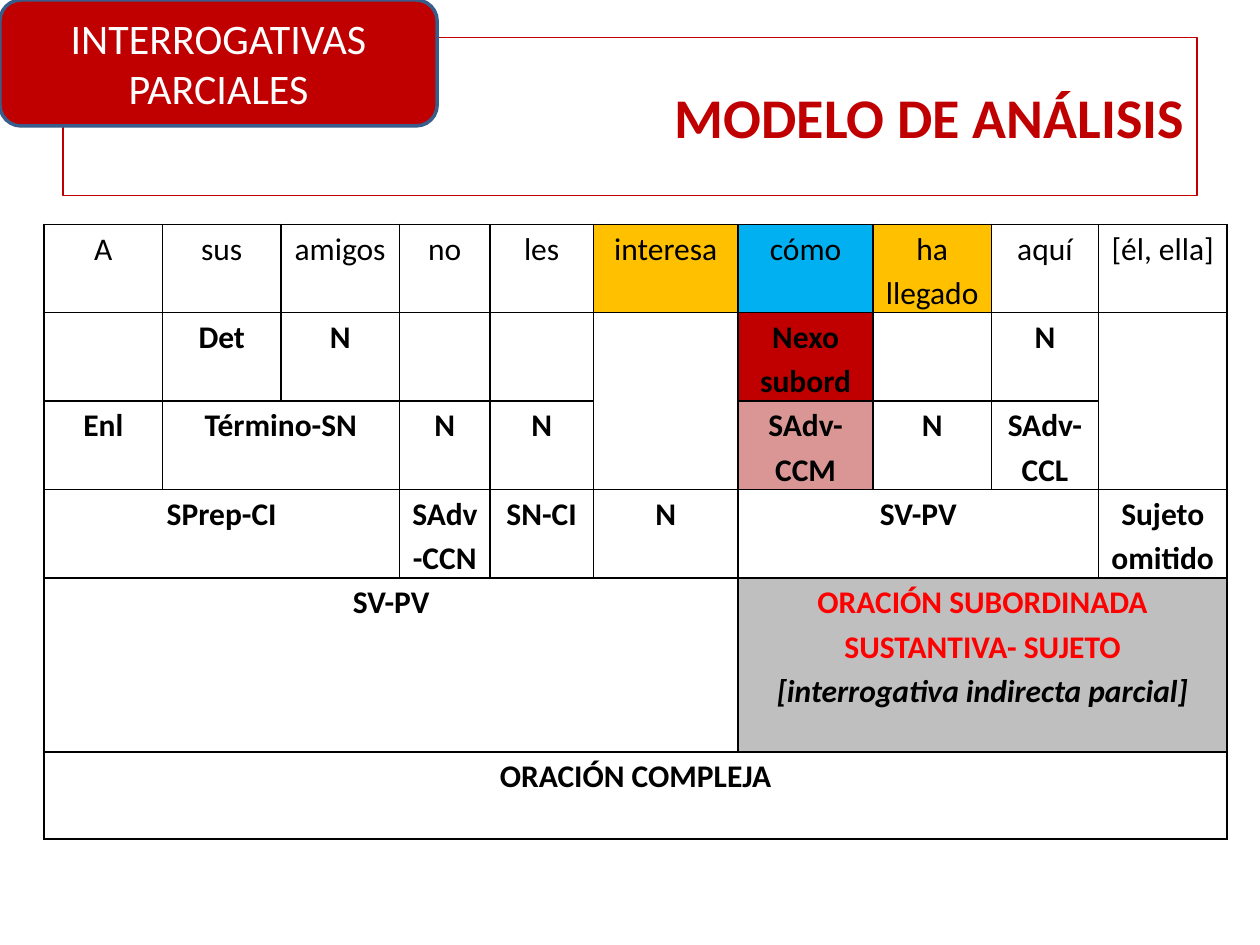
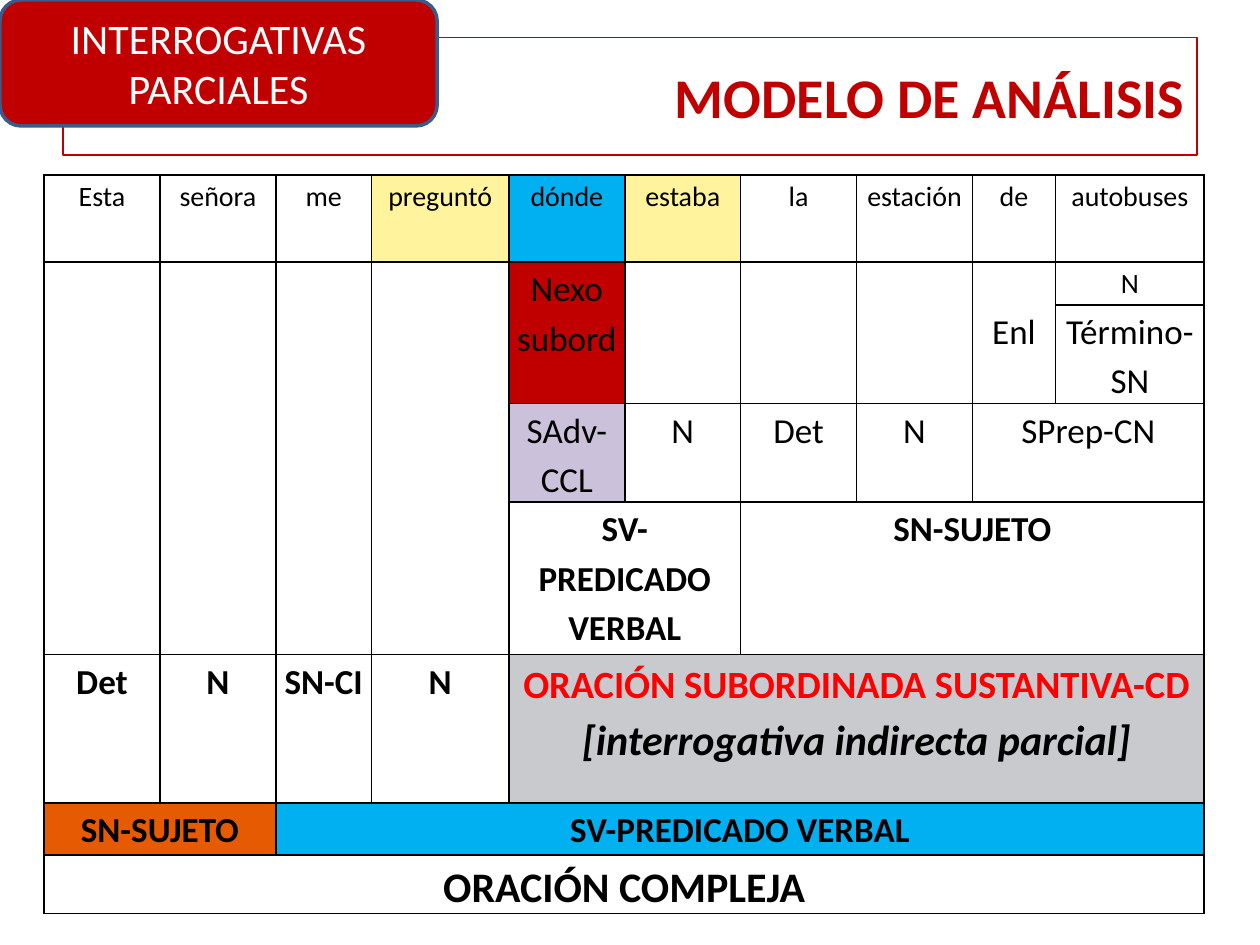
from lxml import etree
from pptx import Presentation
from pptx.dml.color import RGBColor
from pptx.enum.shapes import MSO_SHAPE
from pptx.enum.text import MSO_ANCHOR, PP_ALIGN
from pptx.oxml.ns import qn
from pptx.util import Inches, Pt

RECT = MSO_SHAPE.RECTANGLE
ROUND = MSO_SHAPE.ROUNDED_RECTANGLE
MIDDLE = MSO_ANCHOR.MIDDLE
CENTER = PP_ALIGN.CENTER
RIGHT = PP_ALIGN.RIGHT

BLACK = RGBColor(0x00, 0x00, 0x00)
WHITE = RGBColor(0xFF, 0xFF, 0xFF)
CRIMSON = RGBColor(0xC0, 0x00, 0x00)
RED = RGBColor(0xFF, 0x00, 0x00)
NAVY = RGBColor(0x38, 0x5D, 0x8A)
AMBER = RGBColor(0xFF, 0xC0, 0x00)
SKY = RGBColor(0x00, 0xB0, 0xF0)
ROSE = RGBColor(0xD9, 0x96, 0x94)
GREY = RGBColor(0xBF, 0xBF, 0xBF)
CREAM = RGBColor(0xFF, 0xF3, 0x9D)
LILAC = RGBColor(0xCC, 0xC1, 0xDA)
SILVER = RGBColor(0xC8, 0xCA, 0xCE)
ORANGE = RGBColor(0xE6, 0x5B, 0x01)

FONT = "Calibri"
COLS, ROWS = 100, 75
EDGES = ("a:lnL", "a:lnR", "a:lnT", "a:lnB")

TITLE = "MODELO DE ANÁLISIS"
TOPIC = "INTERROGATIVAS\nPARCIALES"


def apply(target, values):
    for name, value in values.items():
        setattr(target, name, value)


class Deck:
    def __init__(self):
        self.show = Presentation()
        apply(self.show, {"slide_width": Inches(10), "slide_height": Inches(7.5)})
        self.slide = None

    def x(self, cols):
        return round(self.show.slide_width * cols / COLS)

    def y(self, rows):
        return round(self.show.slide_height * rows / ROWS)

    def page(self):
        self.slide = self.show.slides.add_slide(self.show.slide_layouts[6])

    def label(self, frame, text, looks, para):
        frame.word_wrap = True
        for i, line in enumerate(text.split("\n")):
            part = frame.paragraphs[0] if i == 0 else frame.add_paragraph()
            apply(part, para)
            run = part.add_run()
            run.text = line
            look = {"name": FONT, **looks[min(i, len(looks) - 1)]}
            run.font.color.rgb = look.pop("rgb", BLACK)
            apply(run.font, look)

    def box(self, kind, place, text, fill, line, look, align):
        left, top, wide, high = place
        shape = self.slide.shapes.add_shape(
            kind, self.x(left), self.y(top), self.x(wide), self.y(high))
        shape.shadow.inherit = False
        if fill is None:
            shape.fill.background()
        else:
            shape.fill.solid()
            shape.fill.fore_color.rgb = fill
        shape.line.color.rgb, width = line
        shape.line.width = Pt(width)
        shape.text_frame.vertical_anchor = MIDDLE
        self.label(shape.text_frame, text, [look], {"alignment": align})

    def head(self, high):
        self.box(RECT, (5, 3, 90, high), TITLE, None, (CRIMSON, 0.75),
                 {"size": Pt(32), "bold": True, "rgb": CRIMSON}, RIGHT)
        self.box(ROUND, (0, 0, 34.7, 10), TOPIC, CRIMSON, (NAVY, 2),
                 {"size": Pt(24), "rgb": WHITE}, CENTER)

    def edge(self, cell):
        props = cell._tc.get_or_add_tcPr()
        for name in EDGES:
            line = etree.SubElement(props, qn(name), w=str(Pt(1)))
            fill = etree.SubElement(line, qn("a:solidFill"))
            etree.SubElement(fill, qn("a:srgbClr"), val=str(BLACK))

    def table(self, top, wides, highs, lines, spans, fills, sizes, bold, looks, pad, drops):
        shape = self.slide.shapes.add_table(
            len(highs), len(wides), self.x(3.5), self.y(top),
            self.x(sum(wides)), self.y(sum(highs)))
        grid = shape.table
        apply(grid, {"first_row": False, "horz_banding": False})
        for col, wide in zip(grid.columns, wides):
            col.width = self.x(wide)
        for row, high in zip(grid.rows, highs):
            row.height = self.y(high)
        for r, line in enumerate(lines):
            for c, text in enumerate(line.split("|")):
                cell = grid.cell(r, c)
                apply(cell, {"margin_left": self.x(pad), "margin_right": self.x(pad),
                             "margin_top": self.y(drops.get((r, c), 0)), "margin_bottom": 0})
                self.edge(cell)
                if (r, c) in fills:
                    cell.fill.solid()
                    cell.fill.fore_color.rgb = fills[r, c]
                else:
                    cell.fill.background()
                if text:
                    base = {"size": Pt(sizes[r]), "bold": r >= bold}
                    mix = [{**base, **look} for look in looks.get((r, c), [{}])]
                    self.label(cell.text_frame, text, mix,
                               {"alignment": CENTER, "line_spacing": 1.15})
        for r, c, high, wide in spans:
            grid.cell(r, c).merge(grid.cell(r + high - 1, c + wide - 1))


def main():
    deck = Deck()

    deck.page()
    deck.head(12.5)
    deck.table(
        top=17.8,
        wides=[9.4, 9.4, 9.4, 7.2, 8.2, 11.5, 10.7, 9.4, 8.5, 10.2],
        highs=[6.9] * 4 + [13.8, 6.9],
        lines=[
            "A|sus|amigos|no|les|interesa|cómo|ha llegado|aquí|[él, ella]",
            "|Det|N||||Nexo subord||N|",
            "Enl|Término-SN||N|N||SAdv-CCM|N|SAdv-CCL|",
            "SPrep-CI|||SAdv-CCN|SN-CI|N|SV-PV|||Sujeto omitido",
            "SV-PV||||||ORACIÓN SUBORDINADA SUSTANTIVA- SUJETO\n"
            "[interrogativa indirecta parcial]|||",
            "ORACIÓN COMPLEJA|||||||||",
        ],
        spans=[(1, 5, 2, 1), (1, 9, 2, 1), (2, 1, 1, 2), (3, 0, 1, 3),
               (3, 6, 1, 3), (4, 0, 1, 6), (4, 6, 1, 4), (5, 0, 1, 10)],
        fills={(0, 5): AMBER, (0, 6): SKY, (0, 7): AMBER, (0, 8): WHITE,
               (1, 6): CRIMSON, (2, 6): ROSE, (4, 6): GREY},
        sizes=[18] * 6,
        bold=1,
        looks={(4, 6): [{"rgb": RED}, {"italic": True}]},
        pad=0.7,
        drops={},
    )

    deck.page()
    deck.head(9.3)
    deck.table(
        top=13.9,
        wides=[9.2, 9.2, 7.6, 10.9] + [9.2] * 4 + [6.6, 11.8],
        highs=[6.9, 3.4, 7.7, 7.7, 12.1, 11.8, 4.1, 4.6],
        lines=[
            "Esta|señora|me|preguntó|dónde|estaba|la|estación|de|autobuses",
            "||||Nexo\nsubord||||Enl|N",
            "|||||||||Término-SN",
            "||||SAdv-CCL|N|Det|N|SPrep-CN|",
            "||||SV-PREDICADO VERBAL||SN-SUJETO|||",
            "Det|N|SN-CI|N|ORACIÓN SUBORDINADA SUSTANTIVA-CD\n"
            "[interrogativa indirecta parcial]|||||",
            "SN-SUJETO||SV-PREDICADO VERBAL|||||||",
            "ORACIÓN COMPLEJA|||||||||",
        ],
        spans=[(1, c, 4, 1) for c in range(4)]
        + [(1, c, 2, 1) for c in range(4, 9)]
        + [(3, 8, 1, 2), (4, 4, 1, 2), (4, 6, 1, 4), (5, 4, 1, 6),
           (6, 0, 1, 2), (6, 2, 1, 8), (7, 0, 1, 10)],
        fills={(0, 3): CREAM, (0, 4): SKY, (0, 5): CREAM, (1, 4): CRIMSON,
               (3, 4): LILAC, (5, 4): SILVER, (6, 0): ORANGE, (6, 2): SKY},
        sizes=[16] + [20] * 6 + [24],
        bold=4,
        looks={(1, 9): [{"size": Pt(16)}],
               (5, 4): [{"size": Pt(22), "rgb": RED},
                        {"size": Pt(24), "italic": True}]},
        pad=0.6,
        drops={(1, 8): 3.4},
    )

    deck.show.save("out.pptx")


if __name__ == "__main__":
    main()
